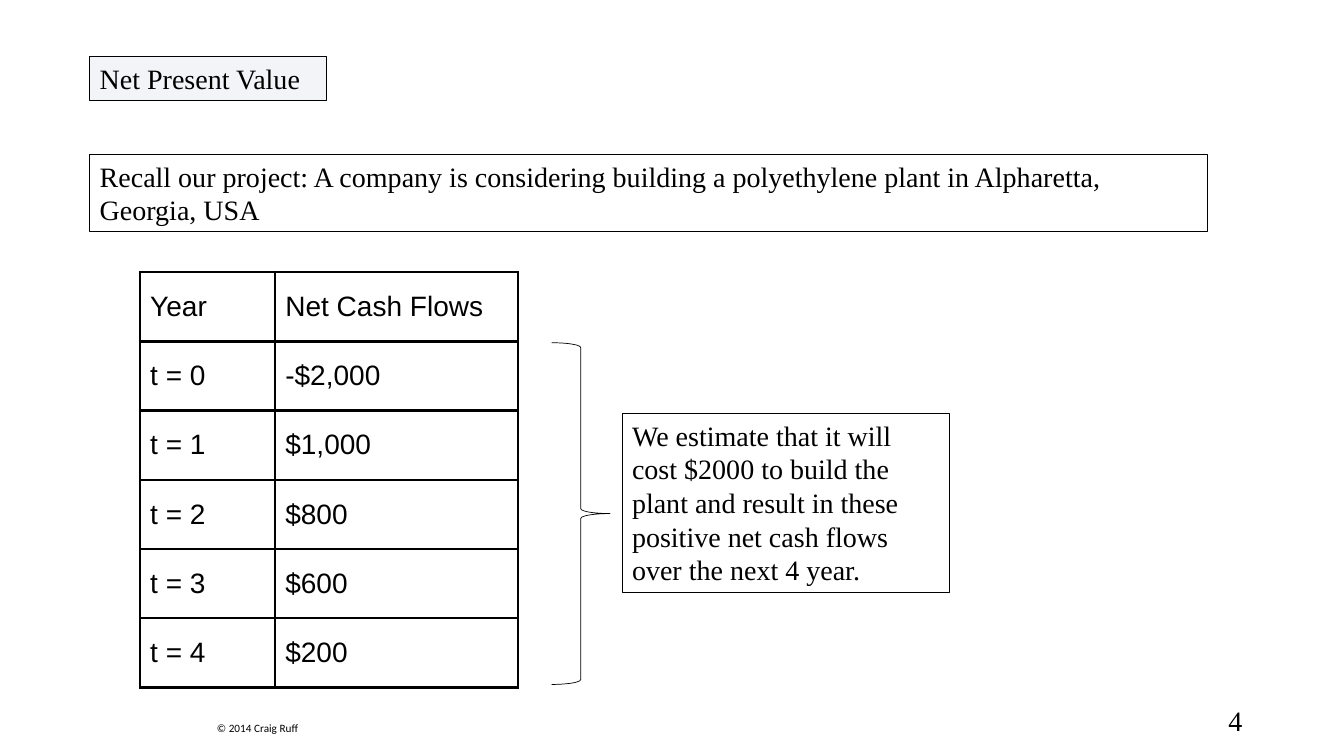
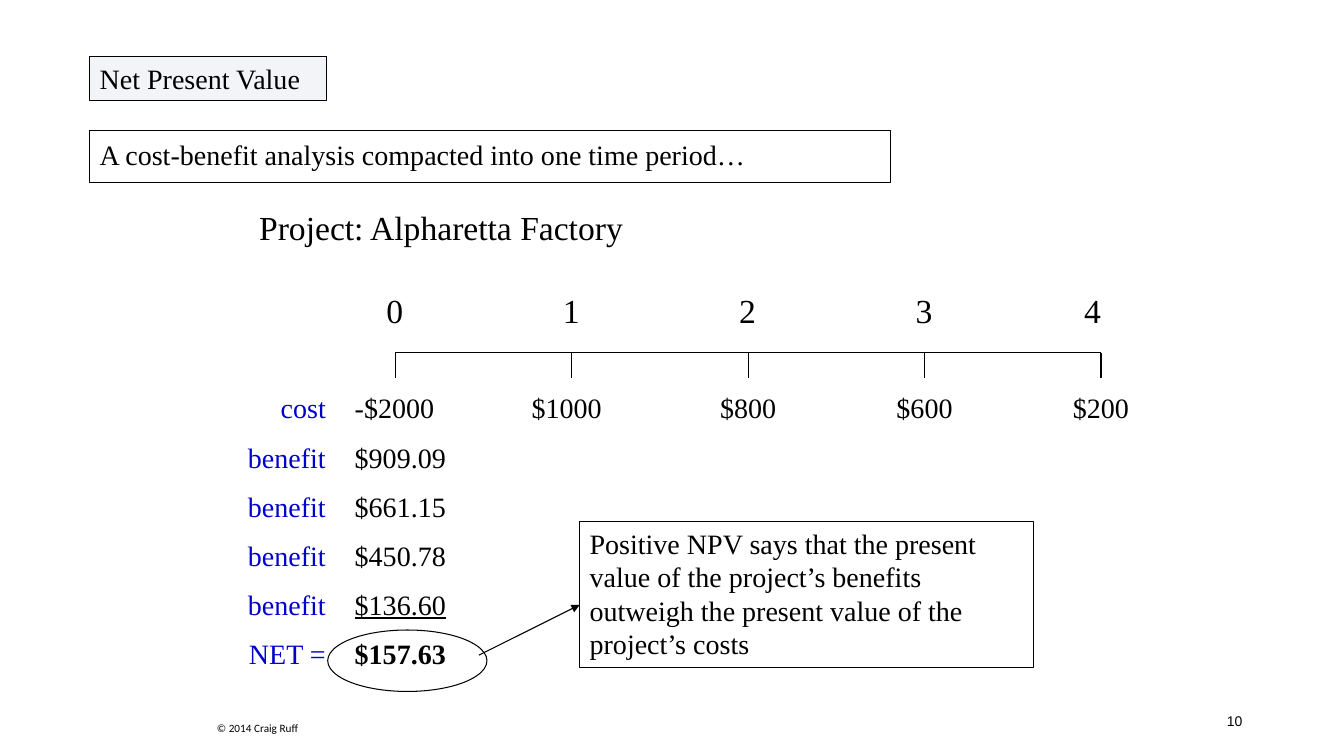
"""Build two net present value slides: the cash flow table and the NPV timeline."""
from dataclasses import dataclass
from typing import Optional

import lxml.etree
import pptx
import pptx.dml.color
import pptx.enum.shapes
import pptx.enum.text
import pptx.oxml.ns
import pptx.slide
import pptx.util

Inches = pptx.util.Inches
Pt = pptx.util.Pt
RGBColor = pptx.dml.color.RGBColor
Align = pptx.enum.text.PP_ALIGN
Anchor = pptx.enum.text.MSO_ANCHOR
Shape = pptx.enum.shapes.MSO_SHAPE
qn = pptx.oxml.ns.qn

BLACK = RGBColor(0x00, 0x00, 0x00)
BLUE = RGBColor(0x00, 0x00, 0xCC)
TINT = RGBColor(0xF2, 0xF4, 0xF7)
SERIF, SANS, FOOTER = "Times New Roman", "Arial", "Calibri"


@dataclass(frozen=True)
class Box:
    """Position and size in inches."""
    x: float
    y: float
    w: float
    h: float

    def emu(self) -> tuple:
        """Return the four lengths for python-pptx."""
        return tuple(Inches(v) for v in (self.x, self.y, self.w, self.h))


@dataclass(frozen=True)
class Run:
    """One run of text with its emphasis."""
    text: str
    bold: bool = False
    underline: bool = False


@dataclass(frozen=True)
class Style:
    """Look of a block of text."""
    size: float = 20
    font: str = SERIF
    color: RGBColor = BLACK
    align: Align = Align.LEFT
    anchor: Anchor = Anchor.TOP
    line_spacing: Optional[float] = None


@dataclass(frozen=True)
class Period:
    """One point on the timeline; offsets shift its texts from the tick."""
    year: str
    flow: str = ""
    year_dx: float = 0
    flow_dx: float = 0


BODY = Style()
CENTERED = Style(align=Align.CENTER)
HEADING = Style(size=24, align=Align.CENTER)

CASH_FLOWS = [
    ("Year", "Net Cash Flows"),
    ("t = 0", "-$2,000"),
    ("t = 1", "$1,000"),
    ("t = 2", "$800"),
    ("t = 3", "$600"),
    ("t = 4", "$200"),
]
PERIODS = [
    Period("0"),
    Period("1", "$1000", flow_dx=-0.05),
    Period("2", "$800"),
    Period("3", "$600"),
    Period("4", "$200", year_dx=-0.08),
]
LABELS = [Run("cost"), *[Run("benefit")] * 4, Run("NET =")]
PRESENT_VALUES = [
    Run("-$2000"),
    Run("$909.09"),
    Run("$661.15"),
    Run("$450.78"),
    Run("$136.60", underline=True),
    Run("$157.63", bold=True),
]


def write(tf, runs: list, style: Style) -> None:
    """Write one paragraph per run into a text frame."""
    tf.word_wrap = True
    tf.vertical_anchor = style.anchor
    for i, run in enumerate(runs):
        p = tf.add_paragraph() if i else tf.paragraphs[0]
        p.alignment = style.align
        p.line_spacing = style.line_spacing
        p.space_before = Pt(style.size * 0.55 if i else 0)
        r = p.add_run()
        r.text = run.text
        r.font.name = style.font
        r.font.size = Pt(style.size)
        r.font.color.rgb = style.color
        r.font.bold = run.bold
        r.font.underline = run.underline


def add_text(s: pptx.slide.Slide, box: Box, runs: list, style: Style) -> None:
    """Add a plain text box."""
    write(s.shapes.add_textbox(*box.emu()).text_frame, runs, style)


def add_outline(s: pptx.slide.Slide, kind: Shape, box: Box, width: float = 0.75,
                fill: Optional[RGBColor] = None):
    """Add an outlined preset shape, unfilled by default."""
    sp = s.shapes.add_shape(kind, *box.emu())
    sp.shadow.inherit = False
    sp.line.color.rgb = BLACK
    sp.line.width = Pt(width)
    if fill is None:
        sp.fill.background()
    else:
        sp.fill.solid()
        sp.fill.fore_color.rgb = fill
    return sp


def add_panel(s: pptx.slide.Slide, box: Box, text: str, style: Style = BODY,
              fill: Optional[RGBColor] = None) -> None:
    """Add a bordered rectangle holding text."""
    sp = add_outline(s, Shape.RECTANGLE, box, fill=fill)
    write(sp.text_frame, [Run(text)], style)


def add_line(s: pptx.slide.Slide, x1: float, y1: float, x2: float, y2: float,
             arrow: bool = False) -> None:
    """Add a straight line, with an arrowhead at its end if asked."""
    kind = pptx.enum.shapes.MSO_CONNECTOR.STRAIGHT
    cn = s.shapes.add_connector(kind, *(Inches(v) for v in (x1, y1, x2, y2)))
    cn.line.color.rgb = BLACK
    cn.line.width = Pt(0.75)
    if arrow:
        ln = cn.line._get_or_add_ln()
        lxml.etree.SubElement(ln, qn("a:tailEnd"), type="triangle")
    lxml.etree.SubElement(cn._element.spPr, qn("a:effectLst"))


def add_borders(cell, width: float) -> None:
    """Draw all four borders of a table cell in black."""
    tc_pr = cell._tc.get_or_add_tcPr()
    for side in ("a:lnL", "a:lnR", "a:lnT", "a:lnB"):
        ln = lxml.etree.SubElement(tc_pr, qn(side), w=str(Pt(width)))
        solid = lxml.etree.SubElement(ln, qn("a:solidFill"))
        lxml.etree.SubElement(solid, qn("a:srgbClr"), val=str(BLACK))


def add_cash_flow_table(s: pptx.slide.Slide, box: Box, widths: tuple) -> None:
    """Add the table of yearly net cash flows."""
    tbl = s.shapes.add_table(len(CASH_FLOWS), len(widths), *box.emu()).table
    tbl.first_row = tbl.horz_banding = False
    for col, width in zip(tbl.columns, widths):
        col.width = Inches(width)
    for row, texts in zip(tbl.rows, CASH_FLOWS):
        row.height = Inches(box.h / len(CASH_FLOWS))
        for cell, text in zip(row.cells, texts):
            add_borders(cell, 2)
            cell.fill.background()
            write(cell.text_frame, [Run(text)], Style(font=SANS))
            cell.vertical_anchor = Anchor.MIDDLE


def add_slide(prs, number: str, number_size: float, number_font: str) -> pptx.slide.Slide:
    """Add a blank slide with the shared title, footer and slide number."""
    s = prs.slides.add_slide(prs.slide_layouts[6])
    add_panel(s, Box(0.89, 0.56, 2.35, 0.44), "Net Present Value", fill=TINT)
    add_text(s, Box(1.95, 7.11, 1.21, 0.24), [Run("© 2014 Craig Ruff")],
             Style(8, FOOTER, align=Align.CENTER))
    add_text(s, Box(9.42, 6.95, 3, 0.4), [Run(number)],
             Style(number_size, number_font, align=Align.RIGHT, anchor=Anchor.MIDDLE))
    return s


def build_project(prs) -> None:
    """Build the slide that recalls the project's cash flows."""
    s = add_slide(prs, "4", 20, SERIF)
    add_panel(s, Box(0.89, 1.53, 11.09, 0.77),
              "Recall our project: A company is considering building a "
              "polyethylene plant in Alpharetta, Georgia, USA")
    add_cash_flow_table(s, Box(1.39, 2.7, 3.75, 4.12), (1.34, 2.41))
    add_outline(s, Shape.RIGHT_BRACE, Box(5.47, 3.4, 0.58, 3.39), width=0.5)
    add_panel(s, Box(6.17, 4.1, 3.25, 1.78),
              "We estimate that it will cost $2000 to build the plant and result "
              "in these positive net cash flows over the next 4 year.")


def build_timeline(prs) -> None:
    """Build the slide that compacts the cash flows into one period."""
    s = add_slide(prs, "10", 10, SANS)
    add_panel(s, Box(0.89, 1.29, 7.94, 0.52),
              "A cost-benefit analysis compacted into one time period…",
              Style(anchor=Anchor.MIDDLE, line_spacing=0.9))
    add_text(s, Box(2.25, 2, 4.25, 0.5), [Run("Project: Alpharetta Factory")], HEADING)

    left, step, axis_y = 3.92, 1.75, 3.5
    for i, period in enumerate(PERIODS):
        x = left + i * step
        add_line(s, x, axis_y, x, axis_y + 0.25)
        add_text(s, Box(x + period.year_dx - 0.42, 2.83, 0.83, 0.5),
                 [Run(period.year)], HEADING)
        if period.flow:
            add_text(s, Box(x + period.flow_dx - 0.6, 3.83, 1.2, 0.43),
                     [Run(period.flow)], CENTERED)
    add_line(s, left, axis_y, left + step * (len(PERIODS) - 1), axis_y)

    add_text(s, Box(2.08, 3.83, 1.25, 3.03), LABELS,
             Style(color=BLUE, align=Align.RIGHT))
    add_text(s, Box(3.42, 3.83, 1.5, 3.03), PRESENT_VALUES, BODY)
    add_panel(s, Box(5.75, 5.17, 4.5, 1.45),
              "Positive NPV says that the present value of the project’s benefits "
              "outweigh the present value of the project’s costs")
    add_line(s, 4.75, 6.5, 5.75, 6, arrow=True)
    add_outline(s, Shape.OVAL, Box(3.25, 6.25, 1.58, 0.61))


def main() -> None:
    """Build and save the presentation."""
    prs = pptx.Presentation()
    prs.slide_width = Inches(13.33)
    prs.slide_height = Inches(7.5)
    build_project(prs)
    build_timeline(prs)
    prs.save("out.pptx")


if __name__ == "__main__":
    main()
